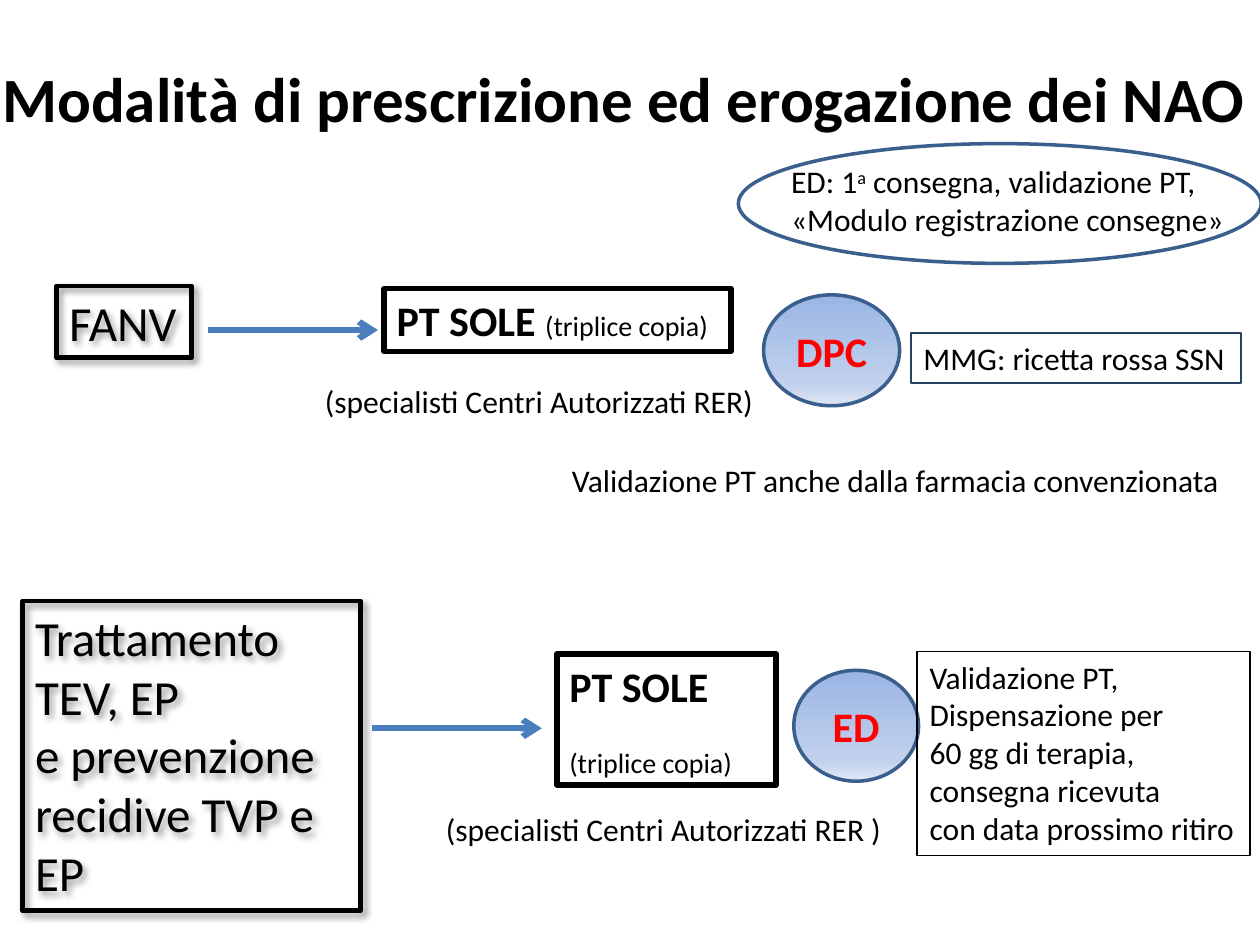
"""Build the slide on how NAO drugs are prescribed and dispensed."""
from dataclasses import dataclass

from lxml import etree
from pptx import Presentation
from pptx.dml.color import RGBColor
from pptx.enum.shapes import MSO_CONNECTOR, MSO_SHAPE
from pptx.enum.text import MSO_ANCHOR, MSO_AUTO_SIZE, PP_ALIGN
from pptx.oxml.ns import qn
from pptx.util import Inches, Pt

RECTANGLE = MSO_SHAPE.RECTANGLE
OVAL = MSO_SHAPE.OVAL
STRAIGHT = MSO_CONNECTOR.STRAIGHT
TOP = MSO_ANCHOR.TOP
MIDDLE = MSO_ANCHOR.MIDDLE
LEFT = PP_ALIGN.LEFT
CENTER = PP_ALIGN.CENTER
GROW = MSO_AUTO_SIZE.SHAPE_TO_FIT_TEXT


@dataclass(frozen=True)
class Theme:
    """Colours, type sizes and line widths of the slide."""

    font: str = "Calibri"
    ink: str = "000000"
    alert: str = "FF0000"
    outline: str = "3A5F8C"
    navy: str = "254061"
    arrow: str = "4B7EBC"
    gradient: tuple = ((0, "9AB5E4"), (82, "C2D1ED"), (100, "E1E8F5"))
    title: int = 36
    condition: int = 28
    heading: int = 24
    body: int = 18
    small: int = 16
    condition_line: float = 2.75
    plan_line: float = 3.25
    arrow_line: float = 3.5
    oval_line: float = 2


@dataclass(frozen=True)
class Span:
    """A piece of a paragraph with its differences from the paragraph."""

    text: str
    size: int | None = None
    bold: bool | None = None
    raised: bool = False


class Board:
    """Draws elements on one slide, on a grid of 100 columns by 75 rows."""

    def __init__(self, deck, theme):
        """Add a blank page and set the grid pitch."""
        self.theme = theme
        self.page = deck.slides.add_slide(deck.slide_layouts[6])
        self.column = deck.slide_width / 100
        self.row = deck.slide_height / 75

    def place(self, *cells):
        """Turn column and row pairs into slide lengths."""
        pitches = (self.column, self.row) * 2
        return [round(cell * pitch) for cell, pitch in zip(cells, pitches)]

    def fill_text(self, box, lines, size, bold=False, color=None, align=LEFT, gap=0):
        """Fill a box with one paragraph per line."""
        frame = box.text_frame
        for index, line in enumerate(lines):
            para = frame.add_paragraph() if index else frame.paragraphs[0]
            para.alignment = align
            para.space_before = Pt(gap if index else 0)
            para.font.name = self.theme.font
            para.font.size = Pt(size)
            para.font.bold = bold
            para.font.color.rgb = RGBColor.from_string(color or self.theme.ink)
            for piece in [Span(line)] if isinstance(line, str) else line:
                span = para.add_run()
                span.text = piece.text
                if piece.size:
                    span.font.size = Pt(piece.size)
                if piece.bold is not None:
                    span.font.bold = piece.bold
                if piece.raised:
                    span.font._element.set("baseline", "30000")

    def text(self, cells, lines, size, bold=False):
        """Add plain text without a frame."""
        box = self.page.shapes.add_textbox(*self.place(*cells))
        box.text_frame.word_wrap = False
        box.text_frame.auto_size = GROW
        self.fill_text(box, lines, size, bold)

    def outlined(self, kind, cells, color, width):
        """Add an unfilled shape with a coloured outline."""
        box = self.page.shapes.add_shape(kind, *self.place(*cells))
        box.shadow.inherit = False
        box.fill.background()
        box.line.color.rgb = RGBColor.from_string(color)
        box.line.width = Pt(width)
        return box

    def framed(self, cells, lines, size, width, color=None, bold=False, wrap=False, gap=0):
        """Add a rectangle with text starting at its top left."""
        box = self.outlined(RECTANGLE, cells, color or self.theme.ink, width)
        box.text_frame.word_wrap = wrap
        box.text_frame.auto_size = GROW
        box.text_frame.vertical_anchor = TOP
        self.fill_text(box, lines, size, bold, gap=gap)
        return box

    def condition(self, cells, lines, wrap=False):
        """Add a framed condition with a soft shadow."""
        theme = self.theme
        box = self.framed(cells, lines, theme.condition, theme.condition_line, wrap=wrap)
        effects = box._element.spPr.find(qn("a:effectLst"))
        shadow = etree.SubElement(
            effects, qn("a:outerShdw"), blurRad=str(Pt(4)), dist=str(Pt(3)),
            dir="2700000", algn="tl", rotWithShape="0")
        shade = etree.SubElement(shadow, qn("a:srgbClr"), val=theme.ink)
        etree.SubElement(shade, qn("a:alpha"), val="40000")

    def channel(self, cells, label):
        """Add a gradient oval naming a distribution channel."""
        theme = self.theme
        oval = self.outlined(OVAL, cells, theme.outline, theme.oval_line)
        oval.fill.gradient()
        oval.fill.gradient_angle = 270
        stops = oval._element.spPr.find(qn("a:gradFill")).find(qn("a:gsLst"))
        for stop in list(stops):
            stops.remove(stop)
        for share, color in theme.gradient:
            stop = etree.SubElement(stops, qn("a:gs"), pos=str(share * 1000))
            etree.SubElement(stop, qn("a:srgbClr"), val=color)
        oval.text_frame.word_wrap = True
        oval.text_frame.vertical_anchor = MIDDLE
        self.fill_text(oval, [label], theme.heading, True, theme.alert, CENTER)

    def arrow(self, column, row, length):
        """Add a horizontal arrow pointing right."""
        ends = self.place(column, row, column + length, row)
        arrow = self.page.shapes.add_connector(STRAIGHT, *ends)
        arrow.line.color.rgb = RGBColor.from_string(self.theme.arrow)
        arrow.line.width = Pt(self.theme.arrow_line)
        etree.SubElement(arrow.line._get_or_add_ln(), qn("a:tailEnd"), type="arrow")
        etree.SubElement(arrow._element.spPr, qn("a:effectLst"))


def main():
    """Draw the slide and save it."""
    deck = Presentation()
    deck.slide_width, deck.slide_height = Inches(10), Inches(7.5)
    theme = Theme()
    board = Board(deck, theme)
    copies = Span("(triplice copia)", theme.small, False)

    board.text((-0.8, 4.2, 102.9, 7.1),
               ["Modalità di prescrizione ed erogazione dei NAO"], theme.title, True)
    board.condition((4.5, 22.7, 10.7, 5.7), ["FANV"])
    board.framed((30.5, 22.9, 27.5, 5), [[Span("PT SOLE "), copies]],
                 theme.heading, theme.plan_line, bold=True)
    board.framed((44.2, 51.9, 17.4, 10.4), ["PT SOLE", [copies]],
                 theme.heading, theme.plan_line, bold=True, wrap=True, gap=20)
    board.condition((1.8, 47.7, 26.8, 24.6),
                    ["Trattamento TEV, EP", "e prevenzione", "recidive TVP e EP"], wrap=True)
    board.channel((60.6, 23.4, 10.8, 8.8), "DPC")
    board.channel((63, 53.2, 9.9, 8.8), "ED")
    for column, row in ((16.5, 26.2), (29.5, 57.8)):
        board.arrow(column, row, 13.5)
    board.framed((72.3, 26.4, 26.2, 4), ["MMG: ricetta rossa SSN"],
                 theme.body, 1.25, theme.navy)
    board.text((61.8, 12.4, 36.8, 7.1),
               [[Span("ED: 1"), Span("a", raised=True), Span(" consegna, validazione PT,")],
                "«Modulo registrazione consegne»"], theme.body)
    board.outlined(OVAL, (58.6, 11.4, 41.5, 9.5), theme.outline, theme.oval_line)
    board.framed((72.8, 51.7, 26.4, 16.2),
                 ["Validazione PT,", "Dispensazione per", "60 gg di terapia,",
                  "consegna ricevuta", "con data prossimo ritiro"], theme.body, 1, wrap=True)
    for cells, note in (
        ((44.4, 36.1, 54, 4), "Validazione PT anche dalla farmacia convenzionata"),
        ((24.8, 29.8, 36.4, 4), "(specialisti Centri Autorizzati RER)"),
        ((34.4, 63.8, 37, 4), "(specialisti Centri Autorizzati RER )"),
    ):
        board.text(cells, [note], theme.body)
    deck.save("out.pptx")


if __name__ == "__main__":
    main()
